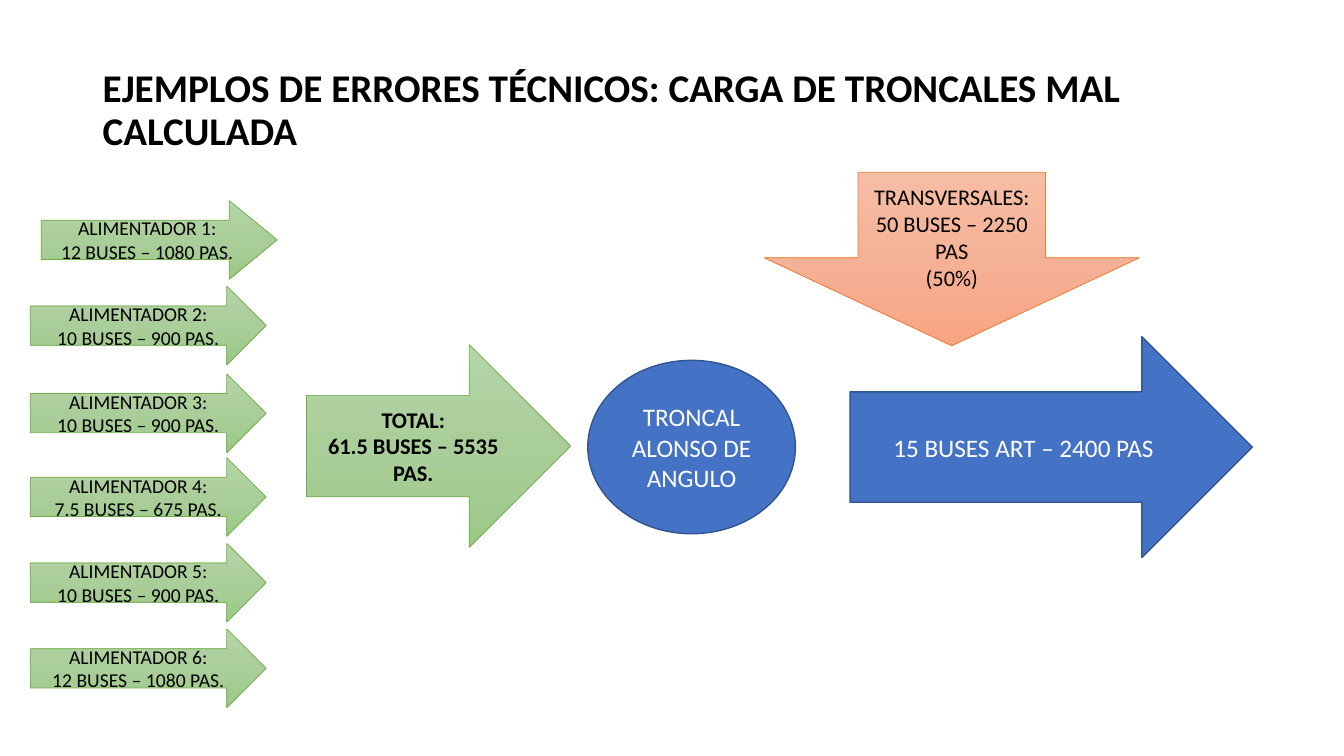
import copy
from dataclasses import dataclass

import pptx
import pptx.dml.color
import pptx.enum.shapes
import pptx.enum.text
import pptx.oxml.ns
import pptx.util

Inches = pptx.util.Inches
Pt = pptx.util.Pt
KIND = pptx.enum.shapes.MSO_SHAPE
ALIGN = pptx.enum.text.PP_ALIGN
MIDDLE = pptx.enum.text.MSO_ANCHOR.MIDDLE


@dataclass(frozen=True)
class Theme:
    font: str = "Calibri"
    dark: str = "000000"
    light: str = "FFFFFF"
    blue: tuple = ("4472C4",)
    green: tuple = ("B5D5A7", "AACE9A", "9CC987")
    orange: tuple = ("F7BDA5", "F5B196", "F8A582")
    navy: str = "325491"
    leaf: str = "70AD47"
    rust: str = "ED7D31"
    title: int = 28
    trunk: int = 18
    total: int = 16
    feeder: int = 14


THEME = Theme()

# Load lines, then the small shift (x, y) of each arrow from the regular column
FEEDERS = [
    ("12 BUSES – 1080 PAS.", 0.11, 0),
    ("10 BUSES – 900 PAS.", 0, 0),
    ("10 BUSES – 900 PAS.", 0, 0.02),
    ("7.5 BUSES – 675 PAS.", 0, 0),
    ("10 BUSES – 900 PAS.", 0, 0),
    ("12 BUSES – 1080 PAS.", 0, 0),
]


def color(code):
    return pptx.dml.color.RGBColor.from_string(code)


def write(shape, text, size, ink=THEME.dark, bold=False, align=ALIGN.CENTER, space=1.0):
    frame = shape.text_frame
    frame.word_wrap = True
    frame.vertical_anchor = MIDDLE
    frame.text = text
    for para in frame.paragraphs:
        para.alignment = align
        para.line_spacing = space
        font = para.runs[0].font
        font.name = THEME.font
        font.size = Pt(size)
        font.bold = bold
        font.color.rgb = color(ink)


def shade(shape, tones):
    """Fill with one solid colour, or with three tones from top to bottom."""
    if len(tones) == 1:
        shape.fill.solid()
        shape.fill.fore_color.rgb = color(tones[0])
        return
    shape.fill.gradient()
    shape.fill.gradient_angle = 270
    first = shape._element.spPr.find(".//" + pptx.oxml.ns.qn("a:gs"))
    first.addnext(copy.deepcopy(first))
    for stop, tone, place in zip(shape.fill.gradient_stops, tones, (0, 0.5, 1)):
        stop.color.rgb = color(tone)
        stop.position = place


def block(slide, kind, box, tones, edge, width, head=None):
    shape = slide.shapes.add_shape(kind, *map(Inches, box))
    shape.shadow.inherit = False
    shade(shape, tones)
    shape.line.color.rgb = color(edge)
    shape.line.width = Pt(width)
    if head is not None:
        shape.adjustments[1] = head
    return shape


def heading(slide, box):
    label = slide.shapes.add_textbox(*map(Inches, box))
    write(label, "EJEMPLOS DE ERRORES TÉCNICOS: CARGA DE TRONCALES MAL CALCULADA",
          THEME.title, bold=True, align=ALIGN.LEFT, space=0.9)


def feeders(slide, box):
    left, top, width, height = box
    tall = 0.78
    pitch = (height - tall) / (len(FEEDERS) - 1)
    for row, (load, dx, dy) in enumerate(FEEDERS):
        place = (left + dx, top + row * pitch + dy, width, tall)
        head = 0.609 if row == 0 else None
        arrow = block(slide, KIND.RIGHT_ARROW, place, THEME.green, THEME.leaf, 0.5, head)
        write(arrow, f"ALIMENTADOR {row + 1}:\n{load}", THEME.feeder)


def total(slide, box):
    arrow = block(slide, KIND.RIGHT_ARROW, box, THEME.green, THEME.leaf, 0.5)
    write(arrow, "TOTAL:\n61.5 BUSES – 5535 PAS.", THEME.total, bold=True)


def trunk(slide, box):
    """Station circle at the left of the box, outgoing arrow at the right."""
    left, top, width, height = box
    wide, tall, reach = 2.06, 1.72, 3.99
    parts = [
        (KIND.OVAL, (left, top + (height - tall) / 2, wide, tall),
         "TRONCAL ALONSO DE ANGULO"),
        (KIND.RIGHT_ARROW, (left + width - reach, top, reach, height),
         "15 BUSES ART – 2400 PAS"),
    ]
    for kind, place, text in parts:
        shape = block(slide, kind, place, THEME.blue, THEME.navy, 1)
        write(shape, text, THEME.trunk, ink=THEME.light)


def cross(slide, box):
    arrow = block(slide, KIND.DOWN_ARROW, box, THEME.orange, THEME.rust, 0.5, 0.507)
    write(arrow, "TRANSVERSALES:\n50 BUSES – 2250 PAS\n(50%)", THEME.total)


def main():
    deck = pptx.Presentation()
    deck.slide_width = Inches(13.33)
    deck.slide_height = Inches(7.5)
    slide = deck.slides.add_slide(deck.slide_layouts[6])
    heading(slide, (0.92, 0.4, 11.5, 1.41))
    trunk(slide, (5.83, 3.34, 6.59, 2.19))
    feeders(slide, (0.3, 1.99, 2.34, 5.03))
    total(slide, (3.04, 3.42, 2.62, 2.01))
    cross(slide, (7.58, 1.71, 3.72, 1.72))
    deck.save("out.pptx")


if __name__ == "__main__":
    main()
